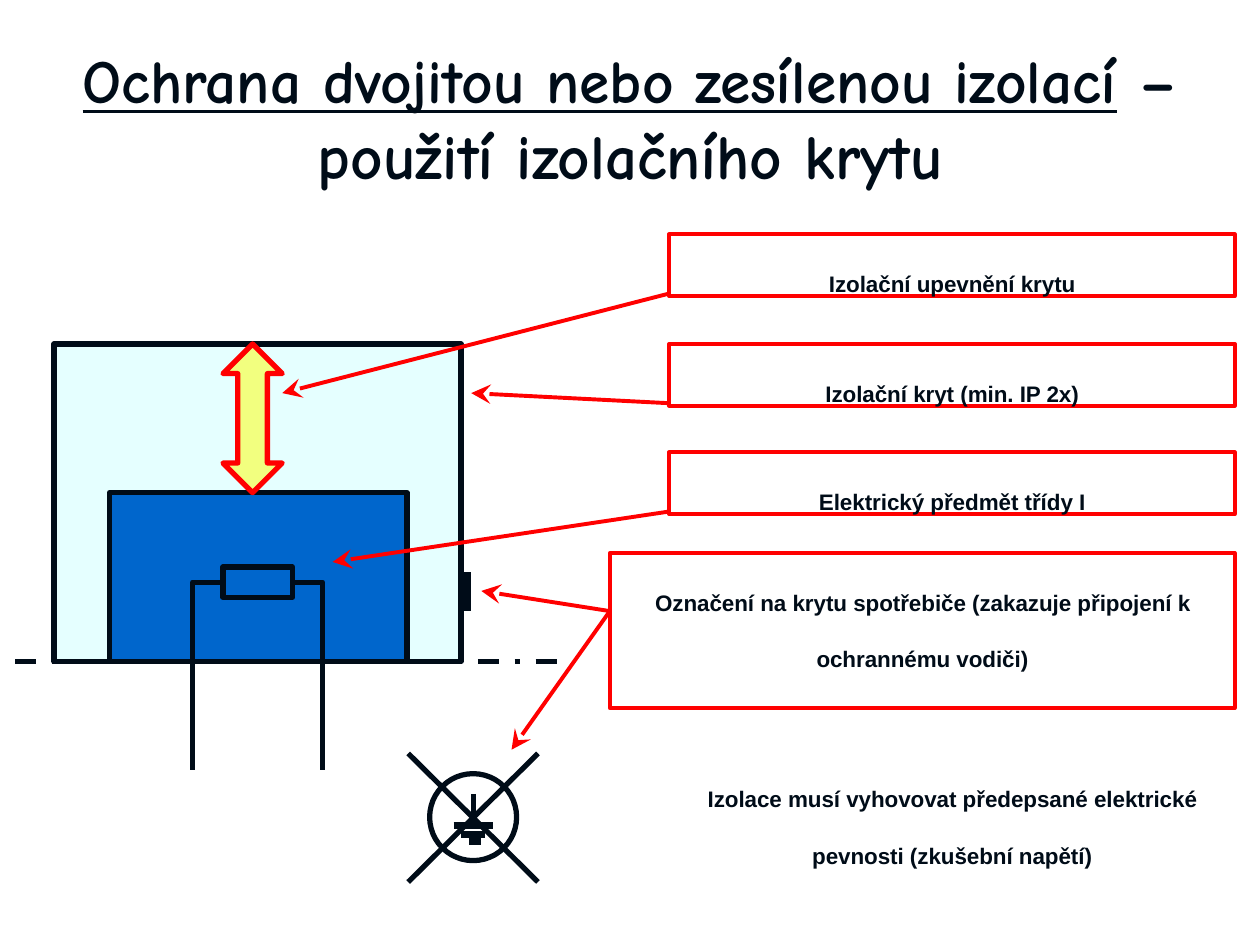
from lxml.etree import SubElement
from pptx import Presentation
from pptx.dml.color import RGBColor
from pptx.enum.dml import MSO_LINE
from pptx.enum.shapes import MSO_CONNECTOR, MSO_SHAPE
from pptx.enum.text import MSO_ANCHOR, MSO_AUTO_SIZE, PP_ALIGN
from pptx.oxml.ns import qn
from pptx.util import Inches, Pt

INK, RED = "000C18", "FF0000"
deck = Presentation()
deck.slide_width, deck.slide_height = Inches(10), Inches(7.5)
CELL = deck.slide_width / 100
slide = deck.slides.add_slide(deck.slide_layouts[6])


def paint(fill, color, opacity=100):
    if color is None:
        fill.background()
        return
    fill.solid()
    fill.fore_color.rgb = RGBColor.from_string(color)
    if opacity < 100:
        tone = fill._xPr.find(".//" + qn("a:srgbClr"))
        SubElement(tone, qn("a:alpha"), val=str(opacity * 1000))


def write(frame, text, size=22, font="Arial", underline=False, baseline=0):
    frame.word_wrap = True
    paragraph = frame.paragraphs[0]
    paragraph.alignment = PP_ALIGN.CENTER
    run = paragraph.add_run()
    run.text = text
    run.font.size, run.font.name = Pt(size), font
    run.font.bold, run.font.underline = True, underline
    paint(run.font.fill, INK)
    if baseline:
        run._r.get_or_add_rPr().set("baseline", str(baseline * 1000))


title = slide.shapes.add_textbox(*[int(n * CELL) for n in (2, 3, 96.1, 12.5)]).text_frame
title.vertical_anchor = MSO_ANCHOR.MIDDLE
write(title, "Ochrana dvojitou nebo zesílenou izolací", size=35, font="Comic Neue", underline=True)
write(title, " – použití izolačního krytu", size=36, font="Comic Neue")

appliance = slide.shapes.add_group_shape().shapes
earth_sign = slide.shapes.add_group_shape().shapes

parts = [
    (appliance, MSO_SHAPE.RECTANGLE, (4.3, 27.3, 32.3, 25.2), "CCFFFF", 51, INK),
    (appliance, MSO_SHAPE.RECTANGLE, (8.7, 39.1, 23.6, 13.4), "0066CC", 100, INK),
    (appliance, MSO_SHAPE.RECTANGLE, (17.7, 45, 5.5, 2.4), None, 100, INK),
    (slide.shapes, MSO_SHAPE.UP_DOWN_ARROW, (17.7, 27.3, 4.7, 11.8), "FFFF00", 50, RED),
    (earth_sign, MSO_SHAPE.OVAL, (34.1, 61.4, 6.9, 6.9), None, 100, INK),
]
for owner, outline, cells, color, opacity, edge in parts:
    part = owner.add_shape(outline, *[int(n * CELL) for n in cells])
    part.shadow.inherit = False
    paint(part.fill, color, opacity)
    paint(part.line.fill, edge)
    part.line.width = Pt(3)

for inner, outer in [(17.7, 15.3), (23.2, 25.6)]:
    start, *bends = [(int(x * CELL), int(y * CELL))
                     for x, y in [(inner, 46.2), (outer, 46.2), (outer, 61.1)]]
    builder = appliance.build_freeform(*start)
    builder.add_line_segments(bends, close=False)
    lead = builder.convert_to_shape()
    lead.shadow.inherit = False
    paint(lead.fill, None)
    paint(lead.line.fill, INK)
    lead.line.width = Pt(3)

labels = [
    ("Izolační upevnění krytu", (53.1, 18.6, 44.9, 4.9), RED),
    ("Izolační kryt (min. IP 2x)", (53.1, 27.3, 44.9, 4.9), RED),
    ("Elektrický předmět třídy I", (53.1, 35.9, 44.9, 4.9), RED),
    ("Označení na krytu spotřebiče (zakazuje připojení k ochrannému vodiči)",
     (48.4, 43.9, 49.6, 12.3), RED),
    ("Izolace musí vyhovovat předepsané elektrické pevnosti (zkušební napětí)",
     (53.1, 59.5, 44.9, 12.3), None),
]
for text, cells, edge in labels:
    label = slide.shapes.add_shape(MSO_SHAPE.RECTANGLE, *[int(n * CELL) for n in cells])
    label.shadow.inherit = False
    paint(label.fill, None)
    paint(label.line.fill, edge)
    if edge:
        label.line.width = Pt(2.25)
    label.text_frame.vertical_anchor = MSO_ANCHOR.TOP
    label.text_frame.auto_size = MSO_AUTO_SIZE.SHAPE_TO_FIT_TEXT
    write(label.text_frame, text, baseline=-35)

strokes = [
    (slide.shapes, (1.2, 52.5, 45.3, 52.5), INK, 3),
    (slide.shapes, (37, 45.4, 37, 48.5), INK, 5),
    (earth_sign, (37.6, 63, 37.6, 65.5), INK, 3),
    (earth_sign, (36, 65.5, 39.1, 65.5), INK, 4),
    (earth_sign, (36.6, 66.2, 38.5, 66.2), INK, 4),
    (earth_sign, (37.2, 66.8, 38.2, 66.8), INK, 4),
    (earth_sign, (32.4, 59.8, 42.7, 70), INK, 3),
    (earth_sign, (42.7, 59.8, 32.4, 70), INK, 3),
    (slide.shapes, (53.1, 23.3, 22.4, 31.2), RED, 2.25),
    (slide.shapes, (53.1, 32, 37.4, 31.2), RED, 2.25),
    (slide.shapes, (53.1, 40.6, 26.4, 44.6), RED, 2.25),
    (slide.shapes, (48.4, 48.5, 38.2, 46.9), RED, 2.25),
    (slide.shapes, (48.4, 48.5, 40.6, 59.5), RED, 2.25),
]
for owner, cells, color, width in strokes:
    stroke = owner.add_connector(MSO_CONNECTOR.STRAIGHT, *[int(n * CELL) for n in cells])
    paint(stroke.line.fill, color)
    stroke.line.width = Pt(width)
    if cells[0] == 1.2:
        stroke.line.dash_style = MSO_LINE.DASH_DOT
    if color == RED:
        SubElement(stroke.line._get_or_add_ln(), qn("a:tailEnd"), type="stealth", w="lg", len="lg")
    SubElement(stroke._element.spPr, qn("a:effectLst"))

deck.save("out.pptx")
